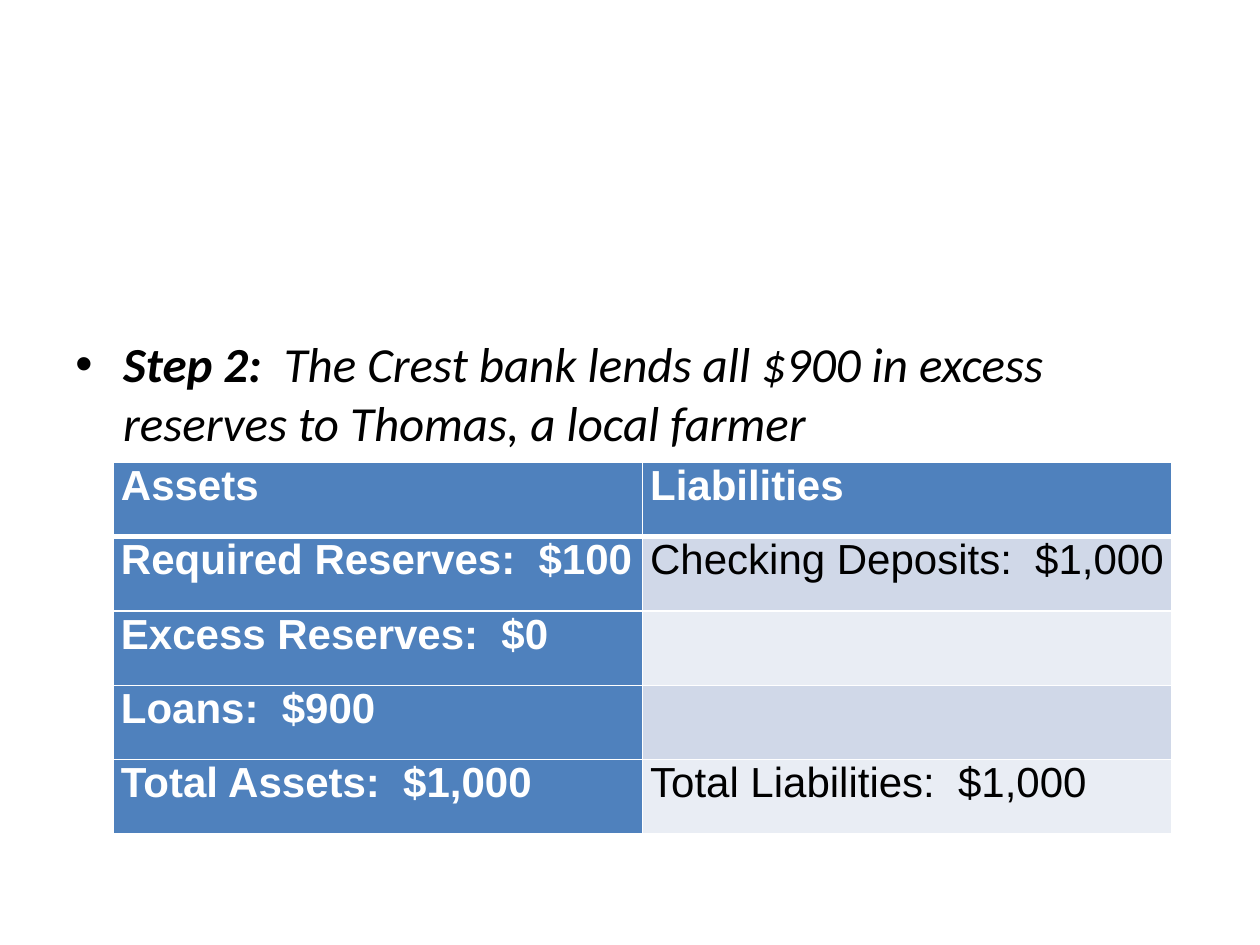
from lxml import etree
from pptx import Presentation
from pptx.dml.color import RGBColor
from pptx.oxml.ns import qn
from pptx.util import Inches, Pt

STEP = [("Step 2:  ", True),
        ("The Crest bank lends all $900 in excess reserves to Thomas, a local farmer", False)]
BALANCE_SHEET = [
    ("Assets", "Liabilities"),
    ("Required Reserves:  $100", "Checking Deposits:  $1,000"),
    ("Excess Reserves:  $0", ""),
    ("Loans:  $900", ""),
    ("Total Assets:  $1,000", "Total Liabilities:  $1,000"),
]
BLUE, WHITE, BLACK = "4F81BD", "FFFFFF", "000000"
BANDS = ("E9EDF4", "D0D8E8")
COLUMN_WIDTH, ROW_HEIGHT = 4.2, 0.59


def rgb(color):
    return RGBColor.from_string(color)


def style_font(font, name, size, color, bold, italic=False):
    font.name, font.size = name, Pt(size)
    font.color.rgb = rgb(color)
    font.bold, font.italic = bold, italic


def add_bullet(paragraph, indent):
    properties = paragraph._p.get_or_add_pPr()
    properties.set("marL", str(Inches(indent)))
    properties.set("indent", str(-Inches(indent)))
    etree.SubElement(properties, qn("a:buFont")).set("typeface", "Arial")
    etree.SubElement(properties, qn("a:buChar")).set("char", "•")


def add_borders(cell, widths):
    """Draw white borders; widths are points for left, right, top and bottom."""
    properties = cell._tc.get_or_add_tcPr()
    for side, width in zip("LRTB", widths):
        line = etree.SubElement(properties, qn(f"a:ln{side}"), w=str(Pt(width)))
        fill = etree.SubElement(line, qn("a:solidFill"))
        etree.SubElement(fill, qn("a:srgbClr")).set("val", WHITE)


def add_step(slide):
    frame = slide.shapes.add_textbox(Inches(0.5), Inches(2.6), Inches(9), Inches(4.13)).text_frame
    frame.word_wrap = True
    paragraph = frame.paragraphs[0]
    add_bullet(paragraph, 0.38)
    for text, bold in STEP:
        run = paragraph.add_run()
        run.text = text
        style_font(run.font, "Calibri", 28, BLACK, bold, italic=True)


def add_balance_sheet(slide):
    rows, columns = len(BALANCE_SHEET), len(BALANCE_SHEET[0])
    table = slide.shapes.add_table(
        rows, columns, Inches(0.9), Inches(3.67),
        Inches(columns * COLUMN_WIDTH), Inches(rows * ROW_HEIGHT)).table
    table.first_col = True
    for column in table.columns:
        column.width = Inches(COLUMN_WIDTH)
    for r, entries in enumerate(BALANCE_SHEET):
        table.rows[r].height = Inches(ROW_HEIGHT)
        for c, text in enumerate(entries):
            cell = table.cell(r, c)
            heading = r == 0 or c == 0
            add_borders(cell, (1, 1, 3 if r == 1 else 1, 3 if r == 0 else 1))
            cell.fill.solid()
            cell.fill.fore_color.rgb = rgb(BLUE if heading else BANDS[r % 2])
            cell.margin_left = cell.margin_right = Inches(0.06)
            cell.margin_top = cell.margin_bottom = 0
            cell.text_frame.text = text
            for run in cell.text_frame.paragraphs[0].runs:
                style_font(run.font, "Arial", 24, WHITE if heading else BLACK, heading)


def main():
    presentation = Presentation()
    presentation.slide_width, presentation.slide_height = Inches(10), Inches(7.5)
    slide = presentation.slides.add_slide(presentation.slide_layouts[6])
    add_step(slide)
    add_balance_sheet(slide)
    presentation.save("out.pptx")


if __name__ == "__main__":
    main()
